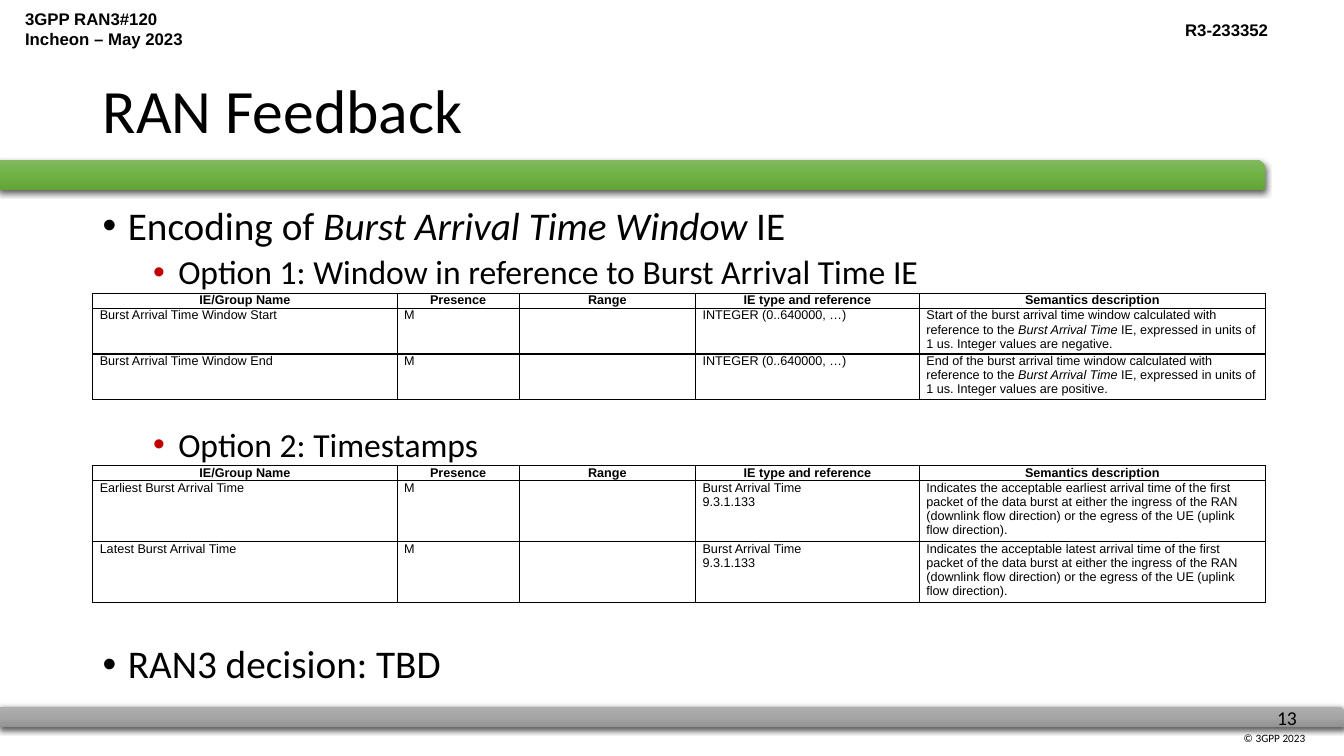
from lxml import etree
from pptx import Presentation
from pptx import util as u
from pptx.dml.color import RGBColor
from pptx.enum import shapes, text
from pptx.oxml.ns import qn

HEADINGS = ["IE/Group Name", "Presence", "Range", "IE type and reference", "Semantics description"]
WINDOW = ("{} of the burst arrival time window calculated with reference to the "
          "*Burst Arrival Time* IE, expressed in units of 1 us. Integer values are {}.")
TIMESTAMP = ("Indicates the acceptable {} arrival time of the first packet of the data burst at either "
             "the ingress of the RAN (downlink flow direction) or the egress of the UE "
             "(uplink flow direction).")
WINDOW_ROWS = [
    [f"Burst Arrival Time Window {edge}", "M", "", "INTEGER (0..640000, …)", WINDOW.format(edge, sign)]
    for edge, sign in (("Start", "negative"), ("End", "positive"))]
TIMESTAMP_ROWS = [
    [f"{limit} Burst Arrival Time", "M", "", "Burst Arrival Time\n9.3.1.133", TIMESTAMP.format(limit.lower())]
    for limit in ("Earliest", "Latest")]
BULLETS = [
    ("Encoding of *Burst Arrival Time Window* IE", 0, 0),
    ("Option 1: Window in reference to Burst Arrival Time IE", 1, 5),
    ("Option 2: Timestamps", 1, 97),
    ("RAN3 decision: TBD", 0, 129),
]


def colour(value):
    """Turn a hex string into a colour."""
    return RGBColor.from_string(value)


def add_element(parent, tag, **attributes):
    """Append a drawing element to a parent and return it."""
    return etree.SubElement(parent, qn(f"a:{tag}"), {k: str(v) for k, v in attributes.items()})


class SlideBuilder:
    """Holds the style and the current slide; places are percentages of the slide."""

    ink = "000000"
    accent = "C00000"
    body_font = "Calibri"
    label_font = "Arial"
    table_columns = (22.65, 9.08, 13.13, 16.65, 25.73)
    table_line = 1.9

    def __init__(self):
        """Start a widescreen presentation with one title-only slide."""
        self.presentation = Presentation()
        self.presentation.slide_width = u.Inches(13.33)
        self.presentation.slide_height = u.Inches(7.5)
        self.slide = self.presentation.slides.add_slide(self.presentation.slide_layouts[5])

    def x(self, percent):
        """Return a share of the slide width."""
        return u.Emu(round(self.presentation.slide_width * percent / 100))

    def y(self, percent):
        """Return a share of the slide height."""
        return u.Emu(round(self.presentation.slide_height * percent / 100))

    def box(self, left, top, width, height):
        """Return a place on the slide."""
        return self.x(left), self.y(top), self.x(width), self.y(height)

    def set_text(self, frame, content, size, font=None, bold=False, align=text.PP_ALIGN.LEFT):
        """Put lines into a frame, with italics between asterisks."""
        frame.text = content.replace("*", "")
        for paragraph, line in zip(frame.paragraphs, content.split("\n")):
            paragraph.alignment = align
            self.set_line(paragraph, line, size, font, bold)

    def set_line(self, paragraph, line, size, font=None, bold=False):
        """Fill and format the runs of one paragraph."""
        paragraph.text = ""
        for index, part in enumerate(line.split("*")):
            if part:
                run = paragraph.add_run()
                run.text = part
                run.font.name = font or self.body_font
                run.font.size = u.Pt(size)
                run.font.bold = bold
                run.font.italic = index % 2 == 1
                run.font.color.rgb = colour(self.ink)

    def bar(self, place, stops):
        """Add a snipped bar with a vertical gradient and a soft shadow."""
        shape = self.slide.shapes.add_shape(shapes.MSO_SHAPE.SNIP_1_RECTANGLE, *self.box(*place))
        shape.line.fill.background()
        shape.fill.gradient()
        shape.fill.gradient_angle = 270
        properties = shape._element.spPr
        stop_list = properties.find(f".//{qn('a:gsLst')}")
        for stop in list(stop_list):
            stop_list.remove(stop)
        for position, value in zip((0, 50000, 100000), stops):
            add_element(add_element(stop_list, "gs", pos=position), "srgbClr", val=value)
        shape.shadow.inherit = False
        shadow = add_element(properties.find(qn("a:effectLst")), "outerShdw", blurRad=u.Pt(4.5),
                             dist=u.Pt(1.5), dir=5400000, algn="ctr", rotWithShape=0)
        add_element(add_element(shadow, "srgbClr", val=self.ink), "alpha", val=63000)

    def label(self, place, content, size, **style):
        """Add a small text box."""
        frame = self.slide.shapes.add_textbox(*self.box(*place)).text_frame
        frame.word_wrap = True
        self.set_text(frame, content, size, **style)

    def title(self, place, content):
        """Move and format the title placeholder."""
        shape = self.slide.shapes.title
        shape.left, shape.top, shape.width, shape.height = self.box(*place)
        frame = shape.text_frame
        frame.auto_size = text.MSO_AUTO_SIZE.NONE
        frame.vertical_anchor = text.MSO_ANCHOR.MIDDLE
        self.set_text(frame, content, 44)
        frame.paragraphs[0].line_spacing = 0.9

    def bullets(self, place, items):
        """Add a two-level bullet list of text, level and space before."""
        frame = self.slide.shapes.add_textbox(*self.box(*place)).text_frame
        frame.word_wrap = True
        for index, (content, level, space) in enumerate(items):
            paragraph = frame.add_paragraph() if index else frame.paragraphs[0]
            properties = paragraph._p.get_or_add_pPr()
            properties.set("marL", str(u.Inches(0.25 + 0.5 * level)))
            properties.set("indent", str(u.Inches(-0.25)))
            bullet_colour = self.accent if level else self.ink
            add_element(add_element(properties, "buClr"), "srgbClr", val=bullet_colour)
            add_element(properties, "buFont", typeface=self.label_font)
            add_element(properties, "buChar", char="•")
            paragraph.level = level
            paragraph.line_spacing = 0.9
            paragraph.space_before = u.Pt(space)
            self.set_line(paragraph, content, 28 - 4 * level)

    def table(self, left, top, rows, lines):
        """Add a bordered table whose body rows are a number of lines high."""
        heights = [self.table_line] + [self.table_line * lines] * len(rows)
        place = self.box(left, top, sum(self.table_columns), sum(heights))
        table = self.slide.shapes.add_table(len(heights), len(HEADINGS), *place).table
        table.horz_banding = False
        for column, width in zip(table.columns, self.table_columns):
            column.width = self.x(width)
        for row, height, contents in zip(table.rows, heights, [HEADINGS] + rows):
            row.height = self.y(height)
            heading = contents is HEADINGS
            align = text.PP_ALIGN.CENTER if heading else text.PP_ALIGN.LEFT
            for cell, content in zip(row.cells, contents):
                self.frame_cell(cell)
                self.set_text(cell.text_frame, content, 9, self.label_font, heading, align)

    def frame_cell(self, cell):
        """Give a cell thin borders, narrow margins and no fill."""
        properties = cell._tc.get_or_add_tcPr()
        for side in "LRTB":
            line = add_element(properties, f"ln{side}", w=u.Pt(1))
            add_element(add_element(line, "solidFill"), "srgbClr", val=self.ink)
        cell.fill.background()
        cell.margin_left = cell.margin_right = u.Inches(0.07)
        cell.margin_top = cell.margin_bottom = 0


def main():
    """Build the RAN feedback slide."""
    builder = SlideBuilder()
    label_style = {"font": builder.label_font, "bold": True}
    builder.bar((0, 93.47, 100, 2.67), ("AFAFAF", "A5A5A5", "939393"))
    builder.bar((-0.08, 21.2, 94.2, 4), ("81B861", "6FB242", "62A336"))
    builder.label((91.8, 96.13, 8.1, 3.07), "© 3GPP 2023", 8)
    builder.label((94.28, 92.67, 3.22, 4.53), "13", 14)
    builder.label((1.13, 0.53, 21.4, 6.8), "3GPP RAN3#120\nIncheon – May 2023", 12, **label_style)
    builder.label((75.15, 2, 19.95, 4), "R3-233352", 12, align=text.PP_ALIGN.RIGHT, **label_style)
    builder.title((6.9, 5.33, 86.25, 19.33), "RAN Feedback")
    builder.bullets((6.9, 26.67, 86.25, 63.47), BULLETS)
    builder.table(6.9, 61.6, TIMESTAMP_ROWS, 4)
    builder.table(6.9, 38.8, WINDOW_ROWS, 3)
    builder.presentation.save("out.pptx")


if __name__ == "__main__":
    main()
